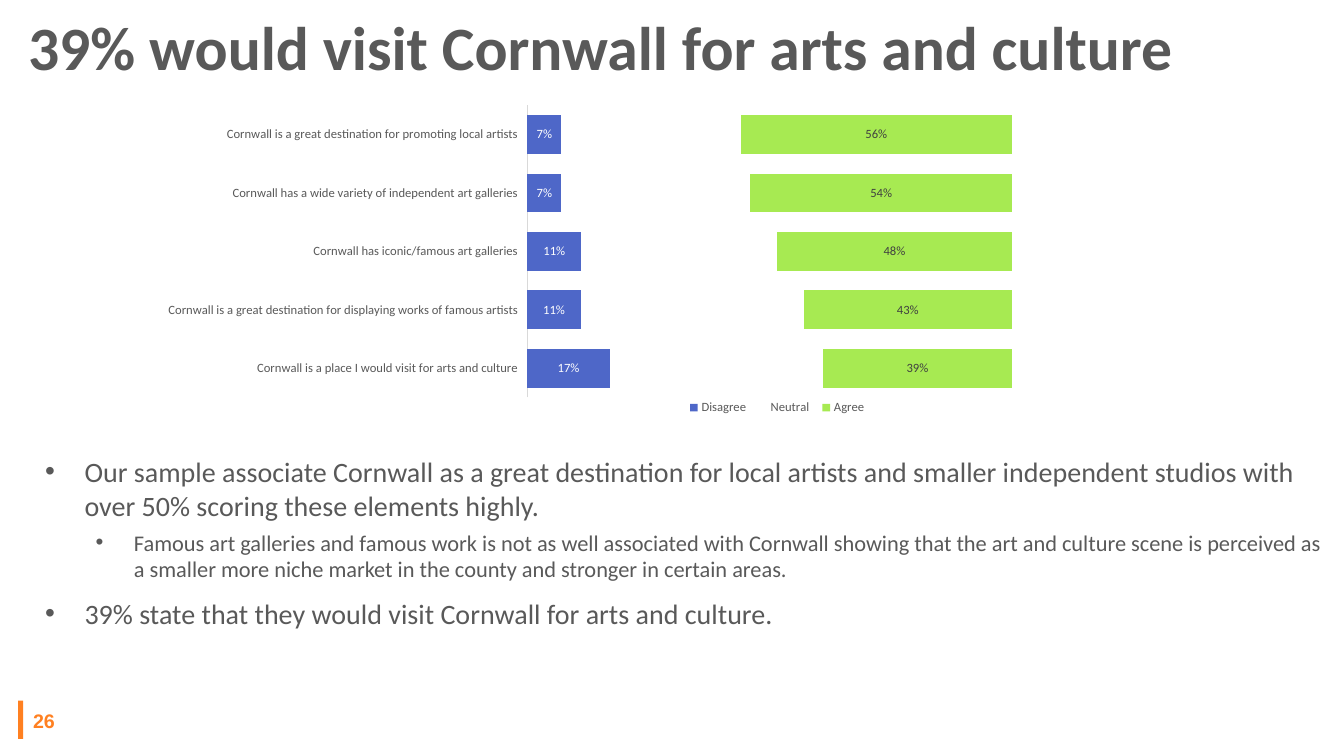
from lxml import etree
from pptx import Presentation
from pptx.chart.data import CategoryChartData
from pptx.dml.color import RGBColor
from pptx.enum.chart import XL_CHART_TYPE, XL_LEGEND_POSITION, XL_TICK_LABEL_POSITION, XL_TICK_MARK
from pptx.enum.shapes import MSO_SHAPE
from pptx.enum.text import MSO_ANCHOR
from pptx.oxml.ns import qn
from pptx.util import Inches, Pt

BARS = XL_CHART_TYPE.BAR_STACKED_100
BOTTOM = XL_LEGEND_POSITION.BOTTOM
LOW = XL_TICK_LABEL_POSITION.LOW
NO_TICK = XL_TICK_MARK.NONE
RECT = MSO_SHAPE.RECTANGLE
TOP, MIDDLE = MSO_ANCHOR.TOP, MSO_ANCHOR.MIDDLE

COLORS = {
    "text": "595959", "accent": "FF8021", "axis": "D9D9D9", "black": "000000",
    "blue": "4E67C8", "white": "FFFFFF", "green": "A7EA52", "dark": "404040",
}


def rgb(name):
    return RGBColor.from_string(COLORS[name])


def write(par, text, size, color="text", face="Calibri", bold=False,
          indent=None, hang=0.39, before=0, line=None):
    """Fill a paragraph; an indent in inches also gives it a bullet."""
    par.text = text
    if indent is not None:
        props = par._p.get_or_add_pPr()
        props.set("marL", str(Inches(indent)))
        props.set("indent", str(-Inches(hang)))
        etree.SubElement(props, qn("a:buFont")).set("typeface", "Arial")
        etree.SubElement(props, qn("a:buChar")).set("char", "•")
    par.space_before = Pt(before)
    if line:
        par.line_spacing = line
    font = par.runs[0].font
    font.name, font.size, font.bold = face, Pt(size), bold
    font.color.rgb = rgb(color)


deck = Presentation()
deck.slide_width, deck.slide_height = Inches(13.33), Inches(7.5)
slide = deck.slides.add_slide(deck.slide_layouts[6])
shapes = slide.shapes

# Page marker
mark = shapes.add_shape(RECT, Inches(0.18), Inches(6.95), Inches(0.05), Inches(0.38))
mark.shadow.inherit = False
mark.fill.solid()
mark.fill.fore_color.rgb = rgb("accent")
mark.line.fill.background()

# Text boxes: place, anchor, paragraphs
boxes = [
    ((0.23, 6.95, 0.54, 0.4), MIDDLE, [
        ("26", dict(size=14, color="accent", face="Arial", bold=True))]),
    ((0.18, 0.07, 12.98, 0.86), MIDDLE, [
        ("39% would visit Cornwall for arts and culture",
         dict(size=44, bold=True, line=0.9))]),
    ((0.35, 4.46, 12.98, 2.4), TOP, [
        ("Our sample associate Cornwall as a great destination for local artists and "
         "smaller independent studios with over 50% scoring these elements highly.",
         dict(size=20, indent=0.39)),
        ("Famous art galleries and famous work is not as well associated with Cornwall "
         "showing that the art and culture scene is perceived as a smaller more niche "
         "market in the county and stronger in certain areas.",
         dict(size=16, indent=0.88, hang=0.38, before=5)),
        ("39% state that they would visit Cornwall for arts and culture.",
         dict(size=20, indent=0.39, before=10))]),
]
for place, anchor, lines in boxes:
    frame = shapes.add_textbox(*map(Inches, place)).text_frame
    frame.word_wrap = True
    frame.vertical_anchor = anchor
    for index, (text, style) in enumerate(lines):
        par = frame.add_paragraph() if index else frame.paragraphs[0]
        write(par, text, **style)

# Chart: name, values, fill, label colour
series = [
    ("Disagree", (0.17, 0.11, 0.11, 0.07, 0.07), "blue", "white"),
    ("Neutral", (0.44, 0.46, 0.4, 0.39, 0.37), "white", None),
    ("Agree", (0.39, 0.43, 0.48, 0.54, 0.56), "green", "dark"),
]
data = CategoryChartData(number_format="0%")
data.categories = [
    "Cornwall is a place I would visit for arts and culture",
    "Cornwall is a great destination for displaying works of famous artists",
    "Cornwall has iconic/famous art galleries",
    "Cornwall has a wide variety of independent art galleries",
    "Cornwall is a great destination for promoting local artists",
]
for name, values, _, _ in series:
    data.add_series(name, values)
chart = shapes.add_chart(BARS, Inches(1.56), Inches(0.98),
                         Inches(8.66), Inches(3.33), data).chart
chart.has_title = False
chart.has_legend = True
legend = chart.legend
legend.position = BOTTOM
legend.include_in_layout = False

cats = chart.category_axis
cats.major_tick_mark = cats.minor_tick_mark = NO_TICK
cats.tick_label_position = LOW
cats.has_major_gridlines = False
cats.format.line.color.rgb = rgb("axis")
cats.format.line.width = Pt(0.75)
chart.value_axis.has_major_gridlines = False
chart.value_axis.visible = False

plot = chart.plots[0]
plot.gap_width, plot.overlap = 50, 100
plot.vary_by_categories = False
fonts = [(chart.font, "black"), (cats.tick_labels.font, "text"), (legend.font, "text")]
for bar, (_, _, fill, ink) in zip(plot.series, series):
    bar.format.fill.solid()
    bar.format.fill.fore_color.rgb = rgb(fill)
    if ink:
        labels = bar.data_labels
        labels.show_value = True
        labels.number_format, labels.number_format_is_linked = "0%", False
        fonts.append((labels.font, ink))
for font, color in fonts:
    font.name, font.size = "Calibri", Pt(9)
    font.color.rgb = rgb(color)

# Fixed places of bars and legend, as shares of the chart
area = chart._chartSpace.find(".//" + qn("c:plotArea"))
key = legend._element
for part, spot, inner, share in [(area, 0, True, (0.424, 0.02, 0.555, 0.87)),
                                 (key, 1, False, (0.6, 0.88, 0.22, 0.08))]:
    for old in part.findall(qn("c:layout")):
        part.remove(old)
    layout = etree.Element(qn("c:layout"))
    part.insert(spot, layout)
    manual = etree.SubElement(layout, qn("c:manualLayout"))
    rules = [("layoutTarget", "inner")] if inner else []
    rules += [("xMode", "edge"), ("yMode", "edge"), *zip("xywh", share)]
    for tag, value in rules:
        etree.SubElement(manual, qn("c:" + tag)).set("val", str(value))

deck.save("out.pptx")
